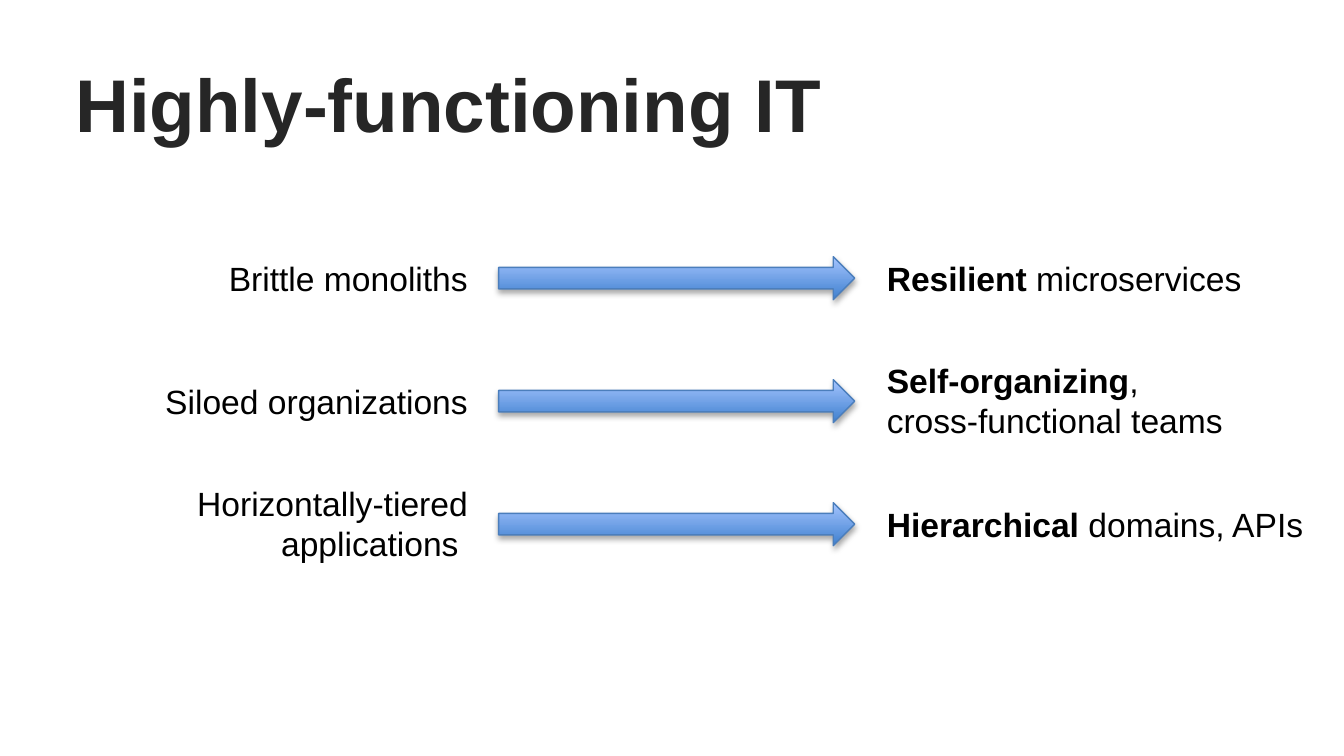
import pptx
import pptx.dml.color
import pptx.enum.shapes
import pptx.enum.text
import pptx.oxml
import pptx.oxml.ns
import pptx.util

Inches = pptx.util.Inches
Pt = pptx.util.Pt
RGBColor = pptx.dml.color.RGBColor
PP_ALIGN = pptx.enum.text.PP_ALIGN
MIDDLE = pptx.enum.text.MSO_ANCHOR.MIDDLE

TITLE_GREY = RGBColor(0x26, 0x26, 0x26)
BLACK = RGBColor(0x00, 0x00, 0x00)
ARROW_DARK = RGBColor(0x3F, 0x80, 0xCE)
ARROW_LIGHT = RGBColor(0xA4, 0xC4, 0xFF)
ARROW_EDGE = RGBColor(0x4B, 0x7E, 0xBC)

SLIDE_WIDTH = Inches(10)
SLIDE_HEIGHT = SLIDE_WIDTH * 9 // 16

# Each label: (text, bold) runs, box width, number of lines
CHANGES = [
    (([("Brittle monoliths", False)], 2.0, 1),
     ([("Resilient", True), (" microservices", False)], 2.87, 1)),
    (([("Siloed organizations", False)], 2.47, 1),
     ([("Self-organizing", True), (", cross-functional teams", False)], 2.77, 2)),
    (([("Horizontally-tiered applications ", False)], 2.6, 2),
     ([("Hierarchical", True), (" domains, APIs", False)], 3.33, 1)),
]

# Grid in inches: column edges, centres of the first and last row, row pitch
BEFORE_RIGHT = 3.58
ARROW_LEFT, ARROW_WIDTH, ARROW_HEIGHT = 3.71, 2.65, 0.32
AFTER_LEFT = 6.5
FIRST_ROW, LAST_ROW = 2.07, 3.9
ROW_PITCH = (LAST_ROW - FIRST_ROW) / (len(CHANGES) - 1)
LABEL_HEIGHTS = {1: 0.4, 2: 0.71}


def write_text(frame, runs, size=18, color=BLACK, align=PP_ALIGN.LEFT, spacing=None):
    """Fill the first paragraph of a frame with (text, bold) runs."""
    paragraph = frame.paragraphs[0]
    paragraph.alignment = align
    paragraph.line_spacing = spacing
    for text, bold in runs:
        run = paragraph.add_run()
        run.text = text
        run.font.name = "Arial"
        run.font.size = Pt(size)
        run.font.bold = bold
        run.font.color.rgb = color


def set_title(slide, text):
    title = slide.shapes.title
    title.left, title.top = Inches(0.56), Inches(0.46)
    title.width, title.height = Inches(8.97), Inches(0.69)
    frame = title.text_frame
    frame.margin_left = 0
    frame.vertical_anchor = MIDDLE
    frame.auto_size = pptx.enum.text.MSO_AUTO_SIZE.NONE
    write_text(frame, [(text, True)], size=40, color=TITLE_GREY, spacing=0.9)


def add_label(slide, label, middle, left=None, right=None):
    """Place a label centred on a row, held by its left or its right edge."""
    runs, width, lines = label
    height = LABEL_HEIGHTS[lines]
    start = right - width if left is None else left
    box = slide.shapes.add_textbox(Inches(start), Inches(middle - height / 2),
                                   Inches(width), Inches(height))
    frame = box.text_frame
    frame.word_wrap = lines > 1
    frame.auto_size = pptx.enum.text.MSO_AUTO_SIZE.SHAPE_TO_FIT_TEXT
    write_text(frame, runs, align=PP_ALIGN.RIGHT if left is None else PP_ALIGN.LEFT)


def add_soft_shadow(shape):
    shape.shadow.inherit = False
    effects = shape.element.spPr.find(pptx.oxml.ns.qn("a:effectLst"))
    effects.append(pptx.oxml.parse_xml(
        f'<a:outerShdw {pptx.oxml.ns.nsdecls("a")} blurRad="{Pt(3.1)}" '
        f'dist="{Pt(1.8)}" dir="5400000" rotWithShape="0">'
        '<a:srgbClr val="000000"><a:alpha val="35000"/></a:srgbClr></a:outerShdw>'))


def add_arrow(slide, middle):
    arrow = slide.shapes.add_shape(
        pptx.enum.shapes.MSO_SHAPE.RIGHT_ARROW,
        Inches(ARROW_LEFT), Inches(middle - ARROW_HEIGHT / 2),
        Inches(ARROW_WIDTH), Inches(ARROW_HEIGHT))
    arrow.fill.gradient()
    arrow.fill.gradient_angle = 90
    for stop, color, position in zip(arrow.fill.gradient_stops,
                                     (ARROW_DARK, ARROW_LIGHT), (0, 1)):
        stop.color.rgb = color
        stop.position = position
    arrow.line.color.rgb = ARROW_EDGE
    arrow.line.width = Pt(0.75)
    add_soft_shadow(arrow)


def main():
    deck = pptx.Presentation()
    deck.slide_width, deck.slide_height = SLIDE_WIDTH, SLIDE_HEIGHT
    slide = deck.slides.add_slide(deck.slide_layouts[5])
    set_title(slide, "Highly-functioning IT")
    for row, (before, after) in enumerate(CHANGES):
        middle = FIRST_ROW + row * ROW_PITCH
        add_arrow(slide, middle)
        add_label(slide, before, middle, right=BEFORE_RIGHT)
        add_label(slide, after, middle, left=AFTER_LEFT)
    deck.save("out.pptx")


if __name__ == "__main__":
    main()
